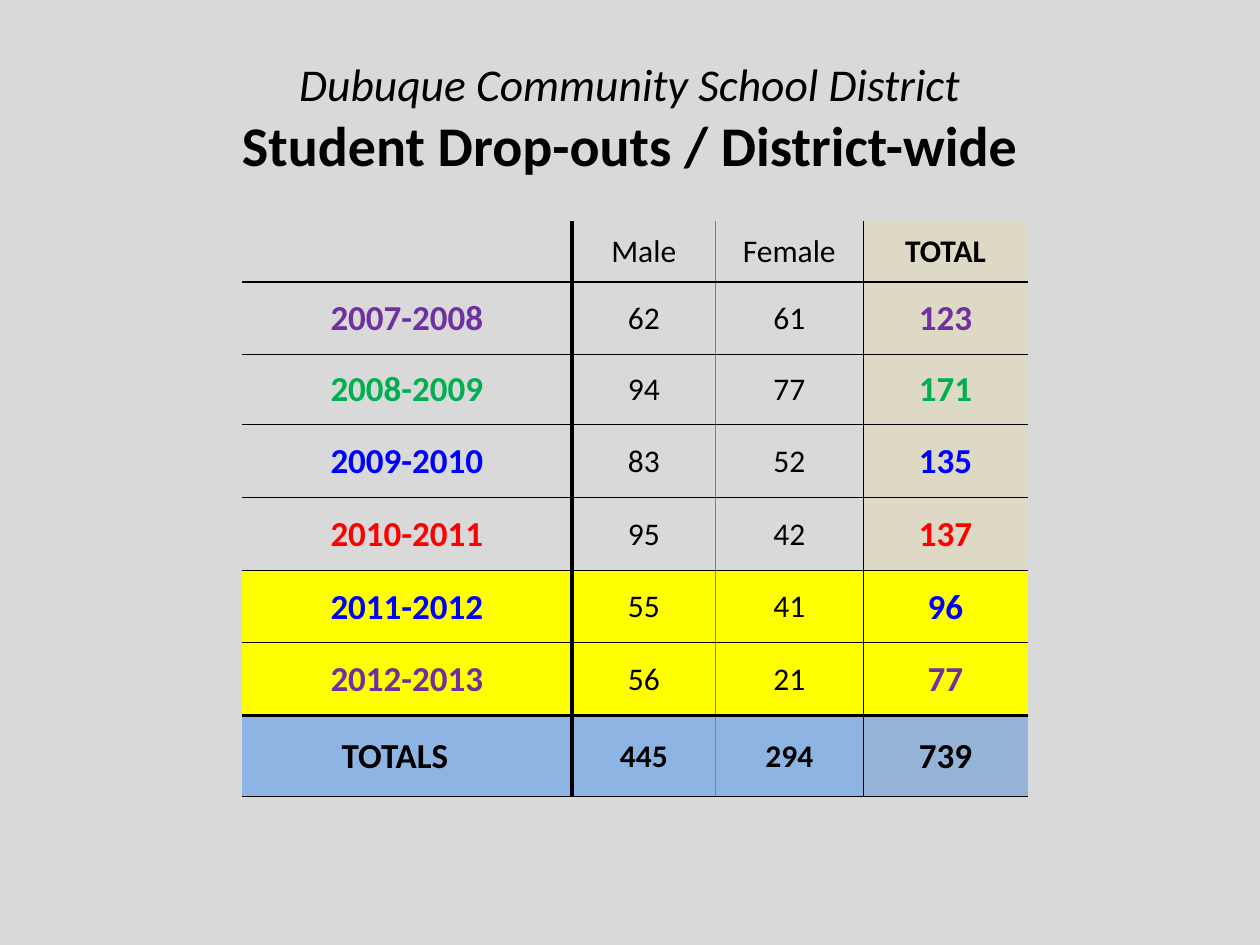
from dataclasses import dataclass
from typing import Optional

from pptx import Presentation
from pptx import util as u
from pptx.dml.color import RGBColor
from pptx.enum import text
from pptx.oxml.ns import qn
from lxml import etree

FONT = "Calibri"
COLORS = {
    "background": "D9D9D9", "black": "000000", "gray": "808080",
    "purple": "7030A0", "green": "00B050", "blue": "0000FF", "red": "FF0000",
    "tan": "DDD9C4", "yellow": "FFFF00", "sky": "8DB4E2", "steel": "95B3D7",
}


@dataclass
class Rule:
    """A ruled line of the table; width in points."""
    color: str
    width: float


@dataclass
class Row:
    values: tuple[str, str, str, str]
    height: float
    accent: str = "black"
    fill: Optional[str] = None
    total_fill: str = "tan"


HEADER = Row(("", "Male", "Female", "TOTAL"), 0.49)
YEARS = [
    Row(("2007-2008", "62", "61", "123"), 0.57, "purple"),
    Row(("2008-2009", "94", "77", "171"), 0.56, "green"),
    Row(("2009-2010", "83", "52", "135"), 0.58, "blue"),
    Row(("2010-2011", "95", "42", "137"), 0.58, "red"),
    Row(("2011-2012", "55", "41", "96"), 0.57, "blue", "yellow", "yellow"),
    Row(("2012-2013", "56", "21", "77"), 0.58, "purple", "yellow", "yellow"),
]
TOTALS = Row(("TOTALS", "445", "294", "739"), 0.64, "black", "sky", "steel")
ROWS = [HEADER, *YEARS, TOTALS]
COLUMN_WIDTHS = [2.62, 1.14, 1.17, 1.31]

# Rules from left to right and from top to bottom, outer edges included.
THIN = Rule("black", 0.5)
HEAVY = Rule("black", 2)
VERTICAL_RULES = [None, HEAVY, Rule("gray", 1), THIN, None]
HORIZONTAL_RULES = [None, Rule("black", 1), *[THIN] * (len(YEARS) - 1), HEAVY, THIN]


def add_span(para, wording: str, size: float, color: str = "black",
             bold: bool = False, italic: bool = False) -> None:
    span = para.add_run()
    span.text = wording
    font = span.font
    font.name, font.size = FONT, u.Pt(size)
    font.bold, font.italic = bold, italic
    font.color.rgb = RGBColor.from_string(COLORS[color])


def set_border(cell, side: str, rule: Optional[Rule]) -> None:
    line = etree.SubElement(cell._tc.get_or_add_tcPr(), qn(f"a:ln{side}"))
    if rule is None:
        etree.SubElement(line, qn("a:noFill"))
        return
    line.set("w", str(u.Pt(rule.width)))
    fill = etree.SubElement(line, qn("a:solidFill"))
    etree.SubElement(fill, qn("a:srgbClr"), val=COLORS[rule.color])


def format_cell(cell, row_index: int, column: int) -> None:
    """Set the borders, then the fill, as the schema orders them."""
    row = ROWS[row_index]
    set_border(cell, "L", VERTICAL_RULES[column])
    set_border(cell, "R", VERTICAL_RULES[column + 1])
    set_border(cell, "T", HORIZONTAL_RULES[row_index])
    set_border(cell, "B", HORIZONTAL_RULES[row_index + 1])
    fill = row.total_fill if column == 3 else row.fill
    if fill:
        cell.fill.solid()
        cell.fill.fore_color.rgb = RGBColor.from_string(COLORS[fill])
    else:
        cell.fill.background()
    cell.vertical_anchor = text.MSO_ANCHOR.MIDDLE
    cell.margin_left = cell.margin_right = cell.margin_top = u.Inches(0.01)
    cell.margin_bottom = 0
    if row is TOTALS and column == 0:
        cell.margin_right = u.Inches(0.2)


def fill_cell(cell, row: Row, column: int) -> None:
    if not row.values[column]:
        return
    para = cell.text_frame.paragraphs[0]
    para.alignment = text.PP_ALIGN.CENTER
    outer = column in (0, 3)
    add_span(para, row.values[column],
             size=20 if outer and row is not HEADER else 18,
             color=row.accent if outer else "black",
             bold=outer or row is TOTALS)


def add_title(page) -> None:
    title = page.shapes.title
    title.left, title.top = u.Inches(0.5), u.Inches(0.3)
    title.width, title.height = u.Inches(9), u.Inches(1.25)
    frame = title.text_frame
    frame.word_wrap = True
    frame.auto_size = text.MSO_AUTO_SIZE.NONE
    frame.vertical_anchor = text.MSO_ANCHOR.MIDDLE
    para = frame.paragraphs[0]
    para.alignment = text.PP_ALIGN.CENTER
    add_span(para, "Dubuque Community School District", 26, italic=True)
    para.add_line_break()
    # The break needs its own size, or the placeholder's size widens the line.
    etree.SubElement(para._p[-1], qn("a:rPr"), sz="2600")
    add_span(para, "Student Drop-outs / District-wide", 32, bold=True)


def add_dropout_table(page) -> None:
    frame = page.shapes.add_table(
        len(ROWS), len(COLUMN_WIDTHS), u.Inches(1.92), u.Inches(1.75),
        u.Inches(sum(COLUMN_WIDTHS)), u.Inches(sum(row.height for row in ROWS)))
    table = frame.table
    table.first_row = table.horz_banding = False
    for column, width in zip(table.columns, COLUMN_WIDTHS):
        column.width = u.Inches(width)
    for row_index, row in enumerate(ROWS):
        table.rows[row_index].height = u.Inches(row.height)
        for column in range(len(COLUMN_WIDTHS)):
            cell = table.cell(row_index, column)
            format_cell(cell, row_index, column)
            fill_cell(cell, row, column)


def main() -> None:
    deck = Presentation()
    deck.slide_width, deck.slide_height = u.Inches(10), u.Inches(7.5)
    page = deck.slides.add_slide(deck.slide_layouts[5])
    page.background.fill.solid()
    page.background.fill.fore_color.rgb = RGBColor.from_string(COLORS["background"])
    add_title(page)
    add_dropout_table(page)
    deck.save("out.pptx")


if __name__ == "__main__":
    main()
